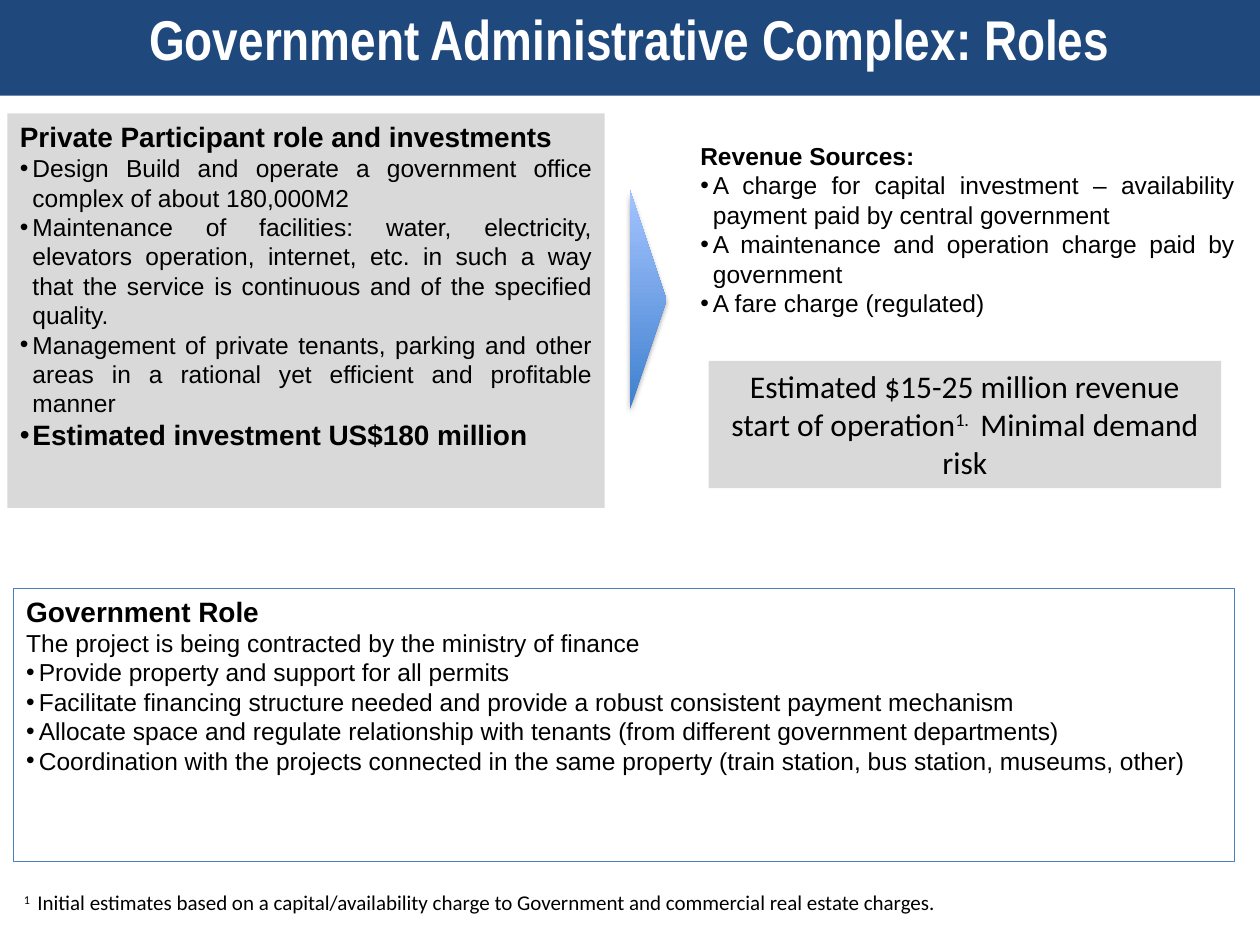
"""Build the roles slide for the Government Administrative Complex."""
from dataclasses import dataclass

from lxml.etree import SubElement
from pptx import Presentation
from pptx.dml.color import RGBColor
from pptx.enum.shapes import MSO_SHAPE as Preset
from pptx.enum.text import MSO_ANCHOR as Anchor, MSO_AUTO_SIZE as AutoSize, PP_ALIGN as Align
from pptx.oxml.ns import qn
from pptx.util import Pt


@dataclass(frozen=True)
class Theme:
    navy: str = "1F497D"
    grey: str = "D9D9D9"
    white: str = "FFFFFF"
    black: str = "000000"
    outline: str = "4B7EBC"
    arrow_low: str = "3F80CE"
    arrow_high: str = "A4C4FF"
    title_font: str = "Arial Narrow"
    body_font: str = "Arial"
    note_font: str = "Calibri"
    title_size: int = 32
    callout_size: int = 18
    heading_size: int = 16
    body_size: int = 14
    note_size: int = 12


THEME = Theme()
INDENT = 7.2
HEADING = (THEME.heading_size, True)
LABEL = (THEME.body_size, True)
BODY = (THEME.body_size, False)

TITLE = "Government Administrative Complex: Roles"
TITLE_BOX = (0, -2.9, 720, 57.6)
ARROW_BOX = (360, 108.7, 20.9, 125.3)

PANELS = [
    {"box": (393.1, 77, 319.7, 175), "fill": None, "line": None, "lines": [
        ("Revenue Sources:", LABEL, False),
        ("A charge for capital investment – availability payment paid by central government", BODY, True),
        ("A maintenance and operation charge paid by government", BODY, True),
        ("A fare charge (regulated)", BODY, True),
    ]},
    {"box": (4.3, 64.8, 341.3, 225.4), "fill": THEME.grey, "line": None, "lines": [
        ("Private Participant role and investments", HEADING, False),
        ("Design Build and operate a government office complex of about 180,000M2", BODY, True),
        ("Maintenance of facilities: water, electricity, elevators operation, internet, etc. in such a way "
         "that the service is continuous and of the specified quality.", BODY, True),
        ("Management of private tenants, parking and other areas in a rational yet efficient and "
         "profitable manner", BODY, True),
        ("Estimated investment US$180 million", HEADING, True),
    ]},
    {"box": (7.9, 336.2, 697.7, 156.2), "fill": THEME.white, "line": THEME.outline, "lines": [
        ("Government Role", HEADING, False),
        ("The project is being contracted by the ministry of finance", BODY, False),
        ("Provide property and support for all permits", BODY, True),
        ("Facilitate financing structure needed and provide a robust consistent payment mechanism", BODY, True),
        ("Allocate space and regulate relationship with tenants (from different government departments)",
         BODY, True),
        ("Coordination with the projects connected in the same property (train station, bus station, "
         "museums, other)", BODY, True),
    ]},
]

NOTES = [
    {"box": (404.9, 206.2, 293, 72.7), "fill": THEME.grey, "size": THEME.callout_size, "align": Align.CENTER,
     "runs": [("Estimated $15-25 million revenue start of operation", False), ("1. ", True),
              (" Minimal demand risk", False)]},
    {"box": (6.5, 504.9, 699.8, 21.8), "fill": None, "size": THEME.note_size, "align": Align.LEFT,
     "runs": [("1 ", True),
              (" Initial estimates based on a capital/availability charge to Government and commercial "
               "real estate charges.", False)]},
]


def rgb(colour):
    return RGBColor.from_string(colour)


def lengths(box):
    return [Pt(length) for length in box]


def add_run(paragraph, text, font, size, colour=THEME.black, bold=False, raised=False):
    run = paragraph.add_run()
    run.text = text
    run.font.name, run.font.size, run.font.bold = font, Pt(size), bold
    run.font.color.rgb = rgb(colour)
    if raised:
        run.font._element.set("baseline", "30000")


def add_bullet(paragraph):
    properties = paragraph._p.get_or_add_pPr()
    properties.set("marL", str(Pt(INDENT)))
    properties.set("indent", str(-Pt(INDENT)))
    SubElement(properties, qn("a:buFont"), typeface=THEME.body_font)
    SubElement(properties, qn("a:buChar"), char="•")


def add_box(slide, box, fill, line=None, anchor=Anchor.TOP):
    if fill is None:
        panel = slide.shapes.add_textbox(*lengths(box))
    else:
        panel = slide.shapes.add_shape(Preset.RECTANGLE, *lengths(box))
        panel.shadow.inherit = False
        panel.fill.solid()
        panel.fill.fore_color.rgb = rgb(fill)
        if line:
            panel.line.color.rgb = rgb(line)
            panel.line.width = Pt(0.75)
        else:
            panel.line.fill.background()
    frame = panel.text_frame
    frame.word_wrap = True
    frame.vertical_anchor = anchor
    return frame


def add_title(slide):
    title = slide.shapes.title
    title.left, title.top, title.width, title.height = lengths(TITLE_BOX)
    title.fill.solid()
    title.fill.fore_color.rgb = rgb(THEME.navy)
    frame = title.text_frame
    frame.auto_size = AutoSize.NONE
    frame.vertical_anchor = Anchor.TOP
    frame.margin_top = Pt(5.5)
    heading = frame.paragraphs[0]
    heading.alignment = Align.CENTER
    add_run(heading, TITLE, THEME.title_font, THEME.title_size, THEME.white, bold=True)


def add_panel(slide, panel):
    frame = add_box(slide, panel["box"], panel["fill"], panel["line"])
    for index, (text, (size, bold), bulleted) in enumerate(panel["lines"]):
        paragraph = frame.add_paragraph() if index else frame.paragraphs[0]
        paragraph.alignment = Align.JUSTIFY
        if bulleted:
            add_bullet(paragraph)
        add_run(paragraph, text, THEME.body_font, size, bold=bold)


def add_note(slide, note):
    frame = add_box(slide, note["box"], note["fill"], anchor=Anchor.TOP)
    frame.auto_size = AutoSize.SHAPE_TO_FIT_TEXT
    paragraph = frame.paragraphs[0]
    paragraph.alignment = note["align"]
    for text, raised in note["runs"]:
        add_run(paragraph, text, THEME.note_font, note["size"], raised=raised)


def add_arrow(slide):
    arrow = slide.shapes.add_shape(Preset.RIGHT_ARROW, *lengths(ARROW_BOX))
    arrow.adjustments[0], arrow.adjustments[1] = 0.5, 1.04
    arrow.line.fill.background()
    arrow.fill.gradient()
    arrow.fill.gradient_angle = 90
    for stop, position, colour in zip(arrow.fill.gradient_stops, (0, 1), (THEME.arrow_low, THEME.arrow_high)):
        stop.position = position
        stop.color.rgb = rgb(colour)
    arrow.shadow.inherit = False
    effects = arrow._element.spPr.find(qn("a:effectLst"))
    shadow = SubElement(effects, qn("a:outerShdw"), blurRad=str(Pt(3.1)), dist=str(Pt(1.8)),
                        dir="5400000", rotWithShape="0")
    tint = SubElement(shadow, qn("a:srgbClr"), val=THEME.black)
    SubElement(tint, qn("a:alpha"), val="35000")


def main():
    deck = Presentation()
    deck.slide_width, deck.slide_height = Pt(720), Pt(540)
    slide = deck.slides.add_slide(deck.slide_layouts.get_by_name("Title Only"))
    add_title(slide)
    for panel in PANELS:
        add_panel(slide, panel)
    add_arrow(slide)
    for note in NOTES:
        add_note(slide, note)
    deck.save("out.pptx")


if __name__ == "__main__":
    main()
